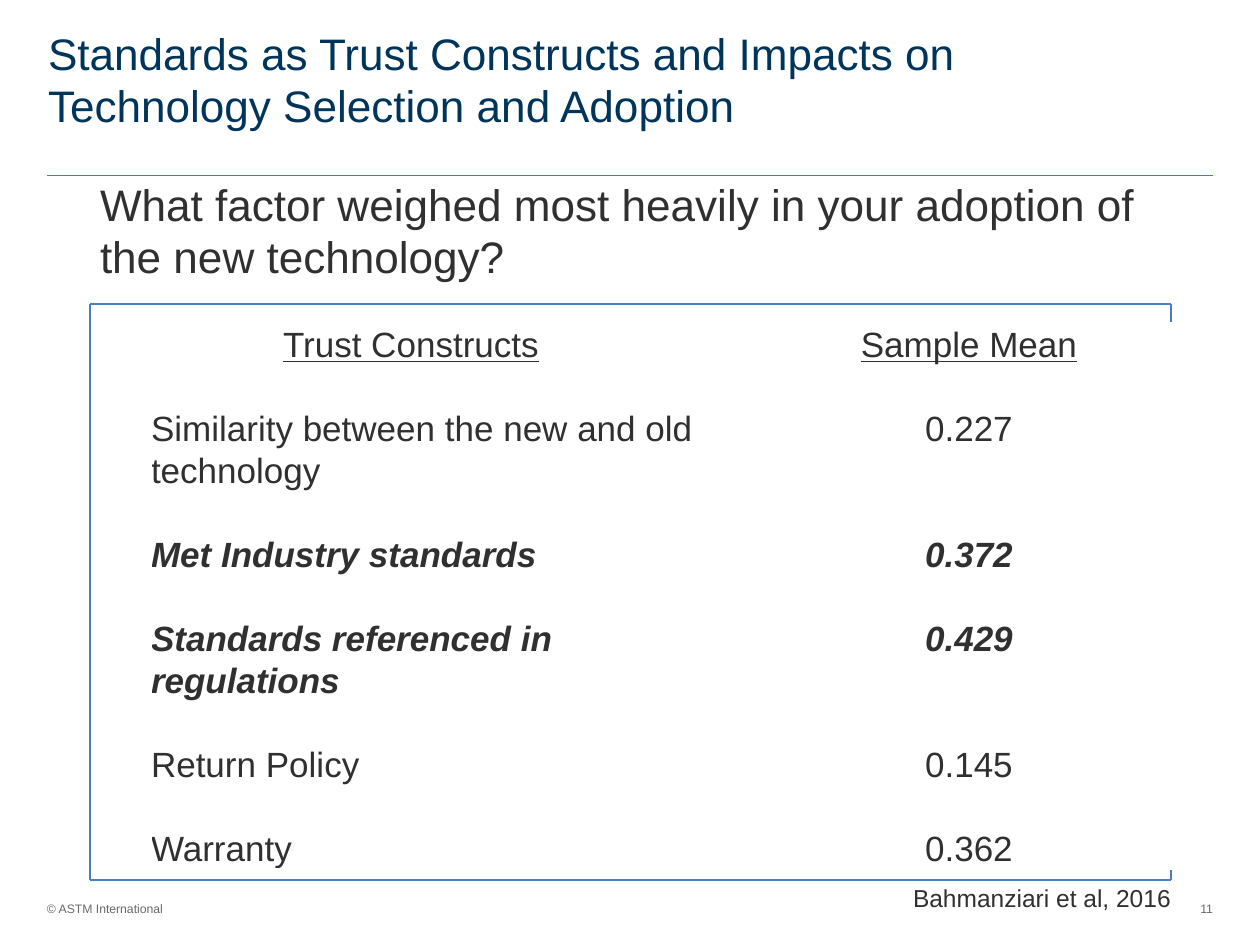
import pptx
import pptx.util
from pptx.dml.color import RGBColor
from pptx.enum.shapes import MSO_CONNECTOR
from pptx.enum.text import MSO_ANCHOR, MSO_AUTO_SIZE, PP_ALIGN
from pptx.oxml.ns import qn
import lxml.etree

NAVY = RGBColor(0x00, 0x35, 0x5B)
DARK = RGBColor(0x30, 0x30, 0x31)
GREY = RGBColor(0x6A, 0x6A, 0x6A)
RULE_BLUE = RGBColor(0x00, 0x95, 0xD6)
FRAME_BLUE = RGBColor(0x4B, 0x7E, 0xBC)
EMU_PER_PX = 914400 / 126


def px(length):
    return pptx.util.Emu(round(length * EMU_PER_PX))


def write(paragraph, text, size, color, align=PP_ALIGN.LEFT, **formats):
    paragraph.text = text
    paragraph.alignment = align
    paragraph.font.name = "Arial"
    paragraph.font.size = pptx.util.Pt(size)
    paragraph.font.color.rgb = color
    for name, value in formats.items():
        setattr(paragraph.font, name, value)


presentation = pptx.Presentation()
presentation.slide_width, presentation.slide_height = px(1260), px(945)
slide = presentation.slides.add_slide(presentation.slide_layouts[1])

# Title and question; the bottom inset lifts the text within its box
headings = [
    (slide.shapes.title, 48, 44, NAVY,
     "Standards as Trust Constructs and Impacts on Technology Selection and Adoption"),
    (slide.placeholders[1], 100, 195, DARK,
     "What factor weighed most heavily in your adoption of the new technology?"),
]
for shape, left, top, color, text in headings:
    shape.left, shape.top, shape.width, shape.height = px(left), px(top), px(1066), px(118)
    frame = shape.text_frame
    frame.auto_size = MSO_AUTO_SIZE.NONE
    frame.vertical_anchor = MSO_ANCHOR.MIDDLE
    frame.margin_left = frame.margin_right = frame.margin_top = 0
    frame.margin_bottom = px(48)
    paragraph = frame.paragraphs[0]
    properties = paragraph._p.get_or_add_pPr()
    properties.set("marL", "0")
    properties.set("indent", "0")
    lxml.etree.SubElement(properties, qn("a:buNone"))
    write(paragraph, text, 25.2, color)
    paragraph.line_spacing = pptx.util.Pt(30)
    paragraph.space_before = pptx.util.Pt(0)

# Rule under the title and frame around the table
LEFT, TOP, RIGHT, BOTTOM = 90, 304, 1171, 880
lines = [
    (47, 175, 1213, 175, RULE_BLUE, 0.5),
    (LEFT, TOP, RIGHT, TOP, FRAME_BLUE, 0.75),
    (LEFT, TOP, LEFT, BOTTOM, FRAME_BLUE, 0.75),
    (RIGHT, TOP, RIGHT, BOTTOM, FRAME_BLUE, 0.75),
    (LEFT, BOTTOM, RIGHT, BOTTOM, FRAME_BLUE, 0.75),
]
for x1, y1, x2, y2, color, weight in lines:
    line = slide.shapes.add_connector(MSO_CONNECTOR.STRAIGHT, px(x1), px(y1), px(x2), px(y2))
    line.line.color.rgb = color
    line.line.width = pptx.util.Pt(weight)
    lxml.etree.SubElement(line._element.spPr, qn("a:effectLst"))

# Table: each row is its text lines plus one line of gap, except the last
LINE = 42
HEADER = {"underline": True}
STRONG = {"bold": True, "italic": True}
rows = [
    ("Trust Constructs", "Sample Mean", 2, HEADER),
    ("Similarity between the new and old technology", "0.227", 3, {}),
    ("Met Industry standards", "0.372", 2, STRONG),
    ("Standards referenced in regulations", "0.429", 3, STRONG),
    ("Return Policy", "0.145", 2, {}),
    ("Warranty", "0.362", 1, {}),
]
height = LINE * sum(row[2] for row in rows)
table = slide.shapes.add_table(len(rows), 2, px(151), px(323), px(1020), px(height)).table
table.first_row = table.horz_banding = False
table.columns[0].width, table.columns[1].width = px(570), px(450)
for index, (construct, mean, line_count, formats) in enumerate(rows):
    table.rows[index].height = px(LINE * line_count)
    for column, text in enumerate((construct, mean)):
        cell = table.cell(index, column)
        cell.fill.background()
        cell.margin_top = cell.margin_bottom = cell.margin_right = 0
        cell.margin_left = px(46 * column)
        if formats is HEADER and column == 0:
            cell.margin_right = px(50)
        centred = column == 1 or formats is HEADER
        paragraph = cell.text_frame.paragraphs[0]
        write(paragraph, text, 20, DARK, PP_ALIGN.CENTER if centred else PP_ALIGN.LEFT, **formats)
        paragraph.line_spacing = pptx.util.Pt(24)

# Citation, copyright line and slide number
notes = [
    ("Bahmanziari et al, 2016", 901, 877, 285, 43, 14, DARK, PP_ALIGN.LEFT, 12, 6),
    ("© ASTM International", 47, 901, 142, 15, 7, GREY, PP_ALIGN.LEFT, 0, 0),
    ("11", 1151, 901, 62, 16, 7, GREY, PP_ALIGN.RIGHT, 0, 0),
]
for text, left, top, width, height, size, color, align, side, edge in notes:
    frame = slide.shapes.add_textbox(px(left), px(top), px(width), px(height)).text_frame
    frame.word_wrap = True
    frame.margin_left = frame.margin_right = px(side)
    frame.margin_top = frame.margin_bottom = px(edge)
    write(frame.paragraphs[0], text, size, color, align)

presentation.save("out.pptx")
